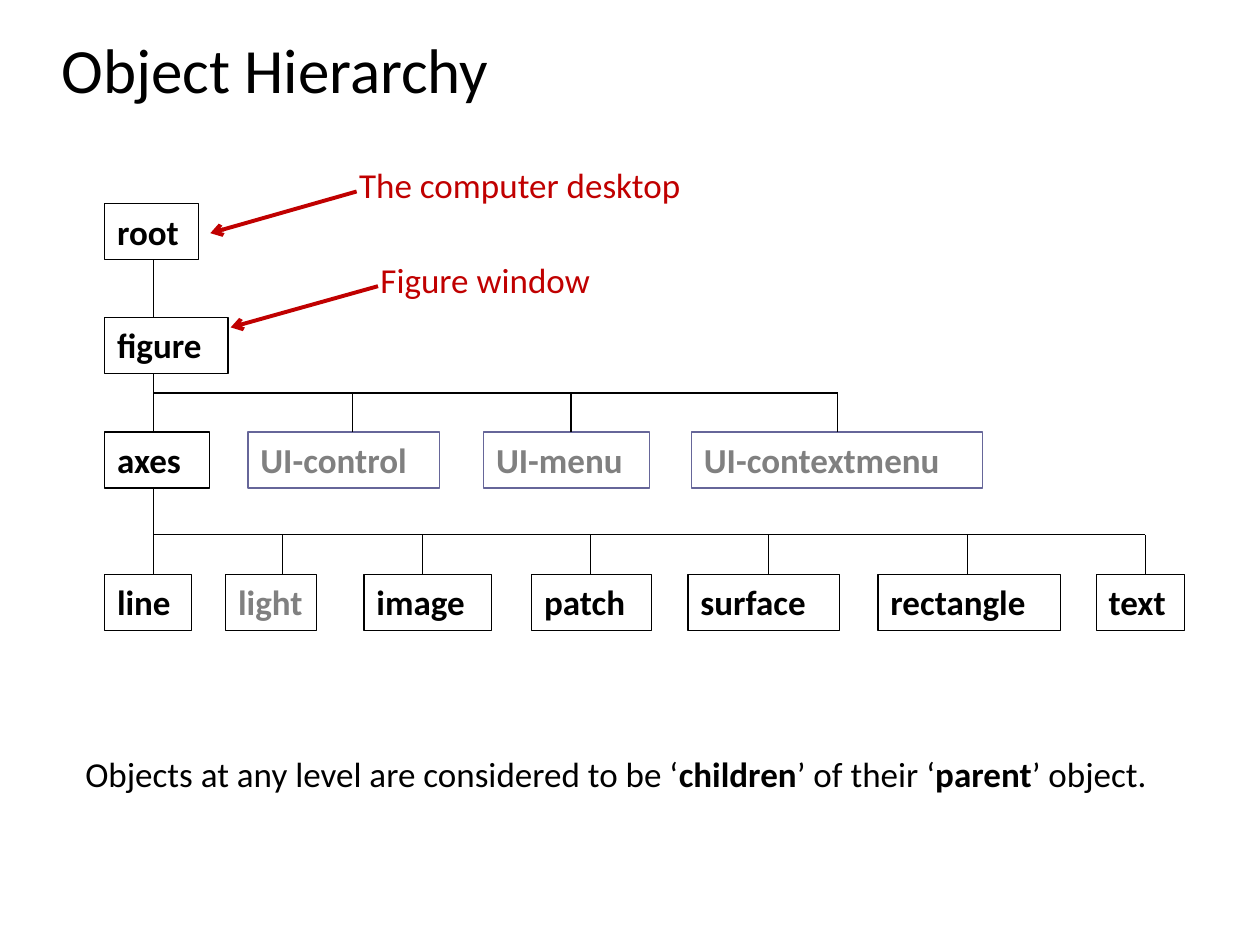
from dataclasses import dataclass

import pptx
import pptx.dml.color
import pptx.enum.shapes
import pptx.enum.text
import pptx.oxml.ns
import pptx.oxml.xmlchemy
import pptx.util
from pptx.shapes.connector import Connector
from pptx.slide import Slide
from pptx.text.text import TextFrame
from pptx.util import Cm


@dataclass(frozen=True)
class Theme:
    font: str = "Calibri"
    title_size: float = 36
    text_size: float = 20
    thin_line: float = 0.75
    arrow_line: float = 2.25
    black: str = "000000"
    muted: str = "808080"
    muted_line: str = "666699"
    accent: str = "C00000"


THEME = Theme()
BOX_HEIGHT = 1.13
TRUNK_X = 3.1
FIRST_LEFT = 2.11
CONTROL_TOP, CONTROL_BUS = 8.71, 7.92
PLOT_TOP, PLOT_BUS = 11.58, 10.78


@dataclass(frozen=True)
class Node:
    """A box of the hierarchy; joint is where its connector meets it. In cm."""
    name: str
    left: float
    top: float
    width: float
    joint: float
    text_color: str = THEME.black
    line_color: str = THEME.black

    @property
    def bottom(self) -> float:
        return self.top + BOX_HEIGHT


@dataclass(frozen=True)
class Callout:
    text: str
    left: float
    top: float
    width: float
    start: tuple[float, float]
    end: tuple[float, float]


@dataclass(frozen=True)
class Run:
    text: str
    bold: bool = False


# The hierarchy, level by level
ROOT = Node("root", FIRST_LEFT, 4.11, 1.9, TRUNK_X)
FIGURE = Node("figure", FIRST_LEFT, 6.4, 2.49, TRUNK_X)
AXES = Node("axes", FIRST_LEFT, CONTROL_TOP, 2.11, TRUNK_X)
CONTROLS = [
    Node(name, left, CONTROL_TOP, width, joint, THEME.muted, THEME.muted_line)
    for name, left, width, joint in [
        ("UI-control", 5.0, 3.86, 7.11),
        ("UI-menu", 9.75, 3.35, 11.51),
        ("UI-contextmenu", 13.94, 5.87, 16.89),
    ]
]
PLOT_OBJECTS = [
    Node("line", FIRST_LEFT, PLOT_TOP, 1.75, TRUNK_X),
    Node("light", 4.55, PLOT_TOP, 1.83, 5.69, THEME.muted),
    Node("image", 7.34, PLOT_TOP, 2.57, 8.51),
    Node("patch", 10.72, PLOT_TOP, 2.41, 11.91),
    Node("surface", 13.87, PLOT_TOP, 3.05, 15.49),
    Node("rectangle", 17.7, PLOT_TOP, 3.68, 19.51),
    Node("text", 22.1, PLOT_TOP, 1.78, 23.09),
]
CALLOUTS = [
    Callout("The computer desktop", 6.99, 3.18, 7.06, (7.19, 3.86), (4.24, 4.7)),
    Callout("Figure window", 7.42, 5.08, 4.78, (7.62, 5.77), (4.65, 6.6)),
]
SUMMARY = [
    Run("Objects at any level are considered to be ‘"),
    Run("children", True),
    Run("’ of their ‘"),
    Run("parent", True),
    Run("’ object."),
]


def rgb(color: str) -> pptx.dml.color.RGBColor:
    return pptx.dml.color.RGBColor.from_string(color)


def write_text(frame: TextFrame, runs: list[Run], color: str, size: float) -> None:
    paragraph = frame.paragraphs[0]
    paragraph.alignment = pptx.enum.text.PP_ALIGN.LEFT
    for part in runs:
        run = paragraph.add_run()
        run.text = part.text
        run.font.name = THEME.font
        run.font.size = pptx.util.Pt(size)
        run.font.bold = part.bold
        run.font.color.rgb = rgb(color)


def fit_to_text(frame: TextFrame) -> None:
    frame.word_wrap = False
    frame.auto_size = pptx.enum.text.MSO_AUTO_SIZE.SHAPE_TO_FIT_TEXT


def draw_node(slide: Slide, node: Node) -> None:
    shape = slide.shapes.add_shape(
        pptx.enum.shapes.MSO_SHAPE.RECTANGLE,
        Cm(node.left), Cm(node.top), Cm(node.width), Cm(BOX_HEIGHT))
    shape.shadow.inherit = False
    shape.fill.background()
    shape.line.color.rgb = rgb(node.line_color)
    shape.line.width = pptx.util.Pt(THEME.thin_line)
    fit_to_text(shape.text_frame)
    shape.text_frame.vertical_anchor = pptx.enum.text.MSO_ANCHOR.TOP
    write_text(shape.text_frame, [Run(node.name, True)], node.text_color, THEME.text_size)


def draw_line(slide: Slide, start: tuple[float, float], end: tuple[float, float],
              color: str = THEME.black, width: float = THEME.thin_line) -> Connector:
    line = slide.shapes.add_connector(
        pptx.enum.shapes.MSO_CONNECTOR.STRAIGHT,
        Cm(start[0]), Cm(start[1]), Cm(end[0]), Cm(end[1]))
    line.line.color.rgb = rgb(color)
    line.line.width = pptx.util.Pt(width)
    line._element.spPr.append(pptx.oxml.xmlchemy.OxmlElement("a:effectLst"))
    return line


def draw_branch(slide: Slide, bus: float, children: list[Node]) -> None:
    draw_line(slide, (TRUNK_X, bus), (children[-1].joint, bus))
    for child in children:
        draw_line(slide, (child.joint, bus), (child.joint, child.top))


def draw_label(slide: Slide, left: float, top: float, width: float,
               runs: list[Run], color: str) -> None:
    box = slide.shapes.add_textbox(Cm(left), Cm(top), Cm(width), Cm(BOX_HEIGHT))
    fit_to_text(box.text_frame)
    write_text(box.text_frame, runs, color, THEME.text_size)


def draw_callout(slide: Slide, callout: Callout) -> None:
    draw_label(slide, callout.left, callout.top, callout.width,
               [Run(callout.text)], THEME.accent)
    arrow = draw_line(slide, callout.start, callout.end, THEME.accent, THEME.arrow_line)
    head = pptx.oxml.xmlchemy.OxmlElement("a:tailEnd")
    head.set("type", "arrow")
    arrow._element.spPr.find(pptx.oxml.ns.qn("a:ln")).append(head)


def draw_title(slide: Slide, text: str) -> None:
    box = slide.shapes.add_textbox(Cm(0.99), Cm(0.58), Cm(23.42), Cm(1.6))
    box.text_frame.word_wrap = True
    box.text_frame.vertical_anchor = pptx.enum.text.MSO_ANCHOR.MIDDLE
    write_text(box.text_frame, [Run(text)], THEME.black, THEME.title_size)


def main() -> None:
    presentation = pptx.Presentation()
    presentation.slide_width = Cm(25.4)
    presentation.slide_height = Cm(19.05)
    slide = presentation.slides.add_slide(presentation.slide_layouts[6])

    # Boxes
    for node in [ROOT, FIGURE, AXES, *CONTROLS, *PLOT_OBJECTS]:
        draw_node(slide, node)

    # Trunk and branches
    for parent, end in [(ROOT, FIGURE.top), (FIGURE, AXES.top), (AXES, PLOT_BUS)]:
        draw_line(slide, (TRUNK_X, parent.bottom), (TRUNK_X, end))
    draw_branch(slide, CONTROL_BUS, CONTROLS)
    draw_branch(slide, PLOT_BUS, PLOT_OBJECTS)

    # Title, callouts and summary
    draw_title(slide, "Object Hierarchy")
    for callout in CALLOUTS:
        draw_callout(slide, callout)
    draw_label(slide, 1.47, 15.04, 22, SUMMARY, THEME.black)

    presentation.save("out.pptx")


if __name__ == "__main__":
    main()
